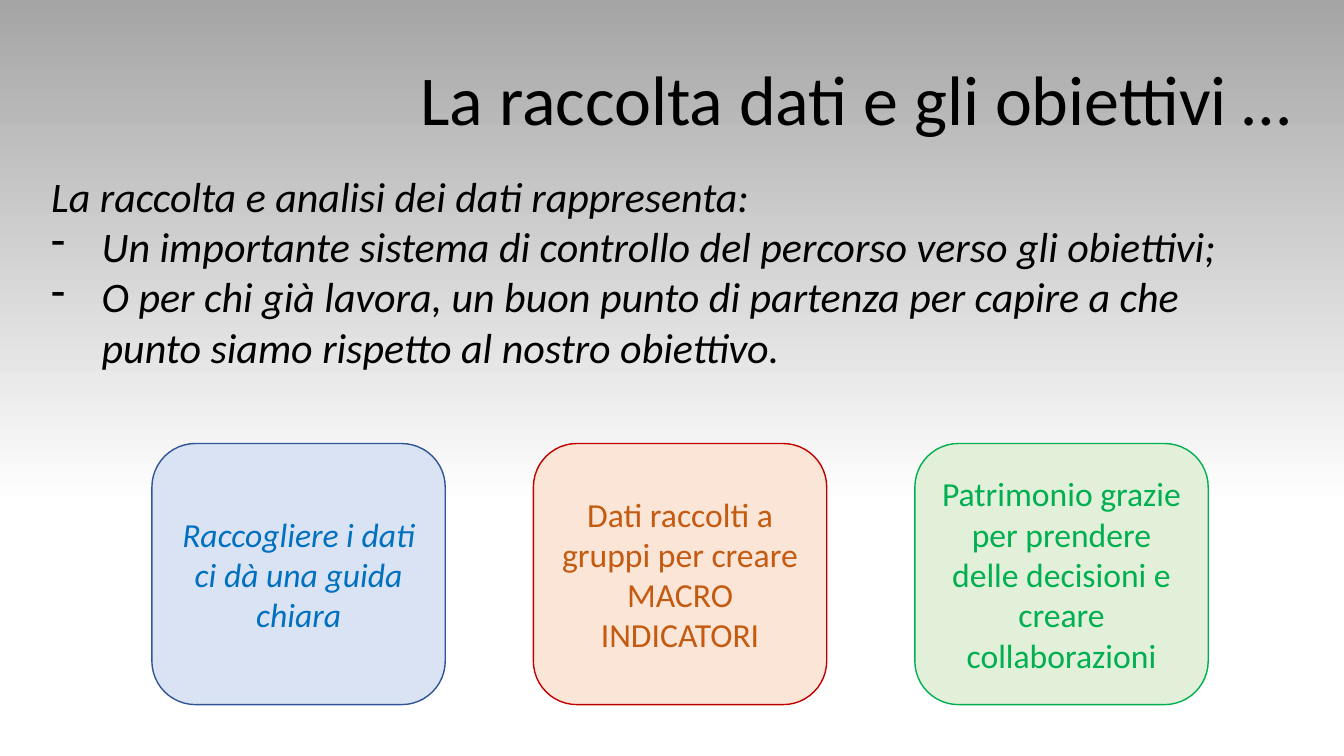
from copy import deepcopy

from lxml import etree
from pptx import Presentation
from pptx.dml.color import RGBColor
from pptx.enum.shapes import MSO_SHAPE
from pptx.enum.text import MSO_ANCHOR, MSO_AUTO_SIZE, PP_ALIGN
from pptx.oxml.ns import qn
from pptx.util import Pt

ROUNDED = MSO_SHAPE.ROUNDED_RECTANGLE
TOP, MIDDLE = MSO_ANCHOR.TOP, MSO_ANCHOR.MIDDLE
FIT_SHAPE = MSO_AUTO_SIZE.SHAPE_TO_FIT_TEXT
LEFT, CENTER, RIGHT = PP_ALIGN.LEFT, PP_ALIGN.CENTER, PP_ALIGN.RIGHT
FONT = "Calibri"
TITLE_ONLY = 5
COLORS = {
    "text": "000000", "white": "FFFFFF", "grey": "A5A5A5",
    "blue_fill": "DAE3F3", "blue_line": "2F5597", "blue_text": "0070C0",
    "orange_fill": "FBE5D6", "orange_line": "C00000", "orange_text": "C55A11",
    "green_fill": "E2F0D9", "green_line": "00B050", "green_text": "00B050",
}
INTRO = "La raccolta e analisi dei dati rappresenta:"
POINTS = [
    "Un importante sistema di controllo del percorso verso gli obiettivi;",
    "O per chi già lavora, un buon punto di partenza per capire a che "
    "punto siamo rispetto al nostro obiettivo.",
]
CARDS = [
    ("Raccogliere i dati ci dà una guida chiara", "blue", True),
    ("Dati raccolti a gruppi per creare MACRO INDICATORI", "orange", False),
    ("Patrimonio grazie per prendere delle decisioni e creare collaborazioni",
     "green", False),
]
CARD_LEFT, CARD_TOP, CARD_STEP = 108.5, 316.8, 272.5
CARD_WIDTH, CARD_HEIGHT = 209.5, 186.5


def color(name):
    """Return the named colour."""
    return RGBColor.from_string(COLORS[name])


def format_paragraph(paragraph, size, color_name, align=LEFT, italic=False):
    """Align a paragraph and style its runs."""
    paragraph.alignment = align
    for run in paragraph.runs:
        run.font.name = FONT
        run.font.size = Pt(size)
        run.font.italic = italic
        run.font.color.rgb = color(color_name)


def add_dash(paragraph):
    """Give a paragraph a hanging dash bullet."""
    properties = paragraph._p.get_or_add_pPr()
    properties.set("marL", str(Pt(36)))
    properties.set("indent", str(Pt(-36)))
    etree.SubElement(properties, qn("a:buFontTx"))
    etree.SubElement(properties, qn("a:buChar"), char="-")


def set_background(slide):
    """Fade the background from white at the bottom to grey at the top."""
    fill = slide.background.fill
    fill.gradient()
    fill.gradient_angle = 90
    white, grey = fill.gradient_stops
    white.color.rgb = color("white")
    grey.color.rgb = color("grey")
    first_stop = slide.element.find(".//" + qn("a:gs"))
    middle_stop = deepcopy(first_stop)
    middle_stop.set("pos", "33000")
    first_stop.addnext(middle_stop)


def set_title(slide, text):
    """Place and style the title."""
    title = slide.shapes.title
    title.left, title.top = Pt(273), Pt(36)
    title.width, title.height = Pt(657), Pt(67.7)
    frame = title.text_frame
    frame.text = text
    frame.word_wrap = False
    frame.auto_size = FIT_SHAPE
    frame.vertical_anchor = TOP
    format_paragraph(frame.paragraphs[0], 50, "text", RIGHT)


def add_body(slide):
    """Add the introduction and its dashed points."""
    box = slide.shapes.add_textbox(Pt(29.5), Pt(118), Pt(862.5), Pt(152.6))
    frame = box.text_frame
    frame.word_wrap = True
    frame.auto_size = FIT_SHAPE
    frame.text = "\n".join([INTRO, *POINTS])
    for paragraph in frame.paragraphs:
        format_paragraph(paragraph, 30, "text", italic=True)
    for paragraph in frame.paragraphs[1:]:
        add_dash(paragraph)


def add_card(slide, left, text, hue, italic):
    """Add a rounded card in the given hue."""
    card = slide.shapes.add_shape(
        ROUNDED, Pt(left), Pt(CARD_TOP), Pt(CARD_WIDTH), Pt(CARD_HEIGHT))
    card.shadow.inherit = False
    card.fill.solid()
    card.fill.fore_color.rgb = color(f"{hue}_fill")
    card.line.color.rgb = color(f"{hue}_line")
    card.line.width = Pt(1)
    frame = card.text_frame
    frame.text = text
    frame.word_wrap = True
    frame.vertical_anchor = MIDDLE
    format_paragraph(frame.paragraphs[0], 24, f"{hue}_text", CENTER, italic)


def main():
    """Build and save the slide."""
    presentation = Presentation()
    presentation.slide_width, presentation.slide_height = Pt(960), Pt(540)
    slide = presentation.slides.add_slide(
        presentation.slide_layouts[TITLE_ONLY])
    set_background(slide)
    set_title(slide, "La raccolta dati e gli obiettivi …")
    add_body(slide)
    for index, (text, hue, italic) in enumerate(CARDS):
        add_card(slide, CARD_LEFT + index * CARD_STEP, text, hue, italic)
    presentation.save("out.pptx")


if __name__ == "__main__":
    main()
